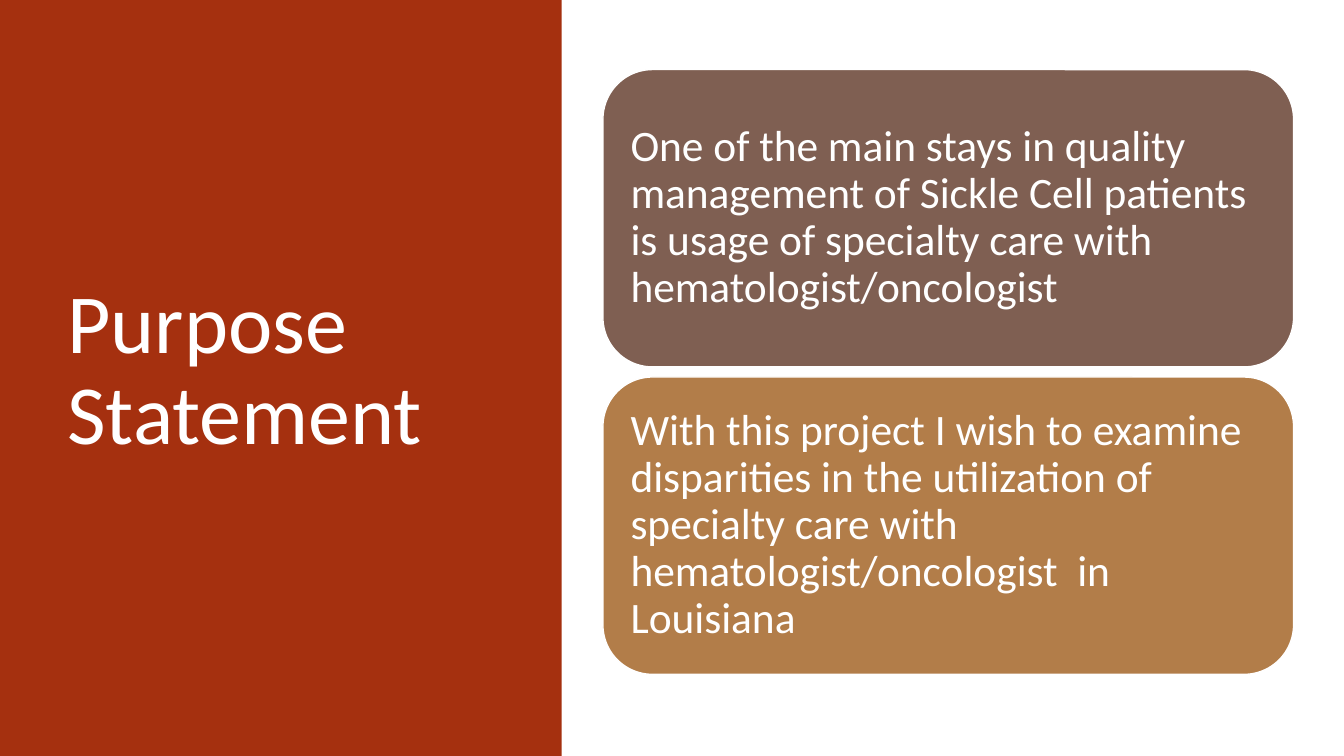
from pptx import Presentation
from pptx.dml.color import RGBColor
from pptx.enum import shapes, text
from pptx.util import Inches, Pt

RUST = RGBColor(0xA5, 0x30, 0x0F)
BROWN = RGBColor(0x7F, 0x5F, 0x52)
OCHRE = RGBColor(0xB2, 0x7D, 0x49)
WHITE = RGBColor(0xFF, 0xFF, 0xFF)
FONT = "Calibri"

CARD_TOP, CARD_HEIGHT, CARD_PITCH = 0.69, 2.95, 3.05
CARDS = [
    ("One of the main stays in quality management of Sickle Cell patients "
     "is usage of specialty care with hematologist/oncologist", BROWN),
    ("With this project I wish to examine disparities in the utilization of "
     "specialty care with hematologist/oncologist  in Louisiana", OCHRE),
]


def write(sp, content, size, margin):
    tf = sp.text_frame
    tf.word_wrap = True
    tf.vertical_anchor = text.MSO_ANCHOR.MIDDLE
    tf.margin_left = tf.margin_right = Inches(margin)
    tf.margin_top = tf.margin_bottom = Inches(margin)
    p = tf.paragraphs[0]
    p.alignment = text.PP_ALIGN.LEFT
    p.line_spacing = 0.9
    r = p.add_run()
    r.text = content
    r.font.name = FONT
    r.font.size = Pt(size)
    r.font.color.rgb = WHITE


def add_block(slide, kind, left, top, width, height, fill):
    sp = slide.shapes.add_shape(
        kind, Inches(left), Inches(top), Inches(width), Inches(height))
    sp.shadow.inherit = False
    sp.fill.solid()
    sp.fill.fore_color.rgb = fill
    sp.line.fill.background()
    return sp


def add_title(slide, content):
    sp = slide.shapes.add_textbox(
        Inches(0.57), Inches(0.68), Inches(4.16), Inches(6.02))
    write(sp, content, 60, 0.1)


def add_card(slide, top, content, fill):
    sp = add_block(slide, shapes.MSO_SHAPE.ROUNDED_RECTANGLE,
                   5.98, top, 6.85, CARD_HEIGHT, fill)
    sp.line.color.rgb = WHITE
    sp.line.width = Pt(1)
    write(sp, content, 31, 0.13)


def main():
    prs = Presentation()
    prs.slide_width = Inches(13.33)
    prs.slide_height = Inches(7.5)
    slide = prs.slides.add_slide(prs.slide_layouts[6])
    add_block(slide, shapes.MSO_SHAPE.RECTANGLE, 0, 0, 5.57, 7.5, RUST)
    add_title(slide, "Purpose Statement")
    for i, (content, fill) in enumerate(CARDS):
        add_card(slide, CARD_TOP + i * CARD_PITCH, content, fill)
    prs.save("out.pptx")


if __name__ == "__main__":
    main()
